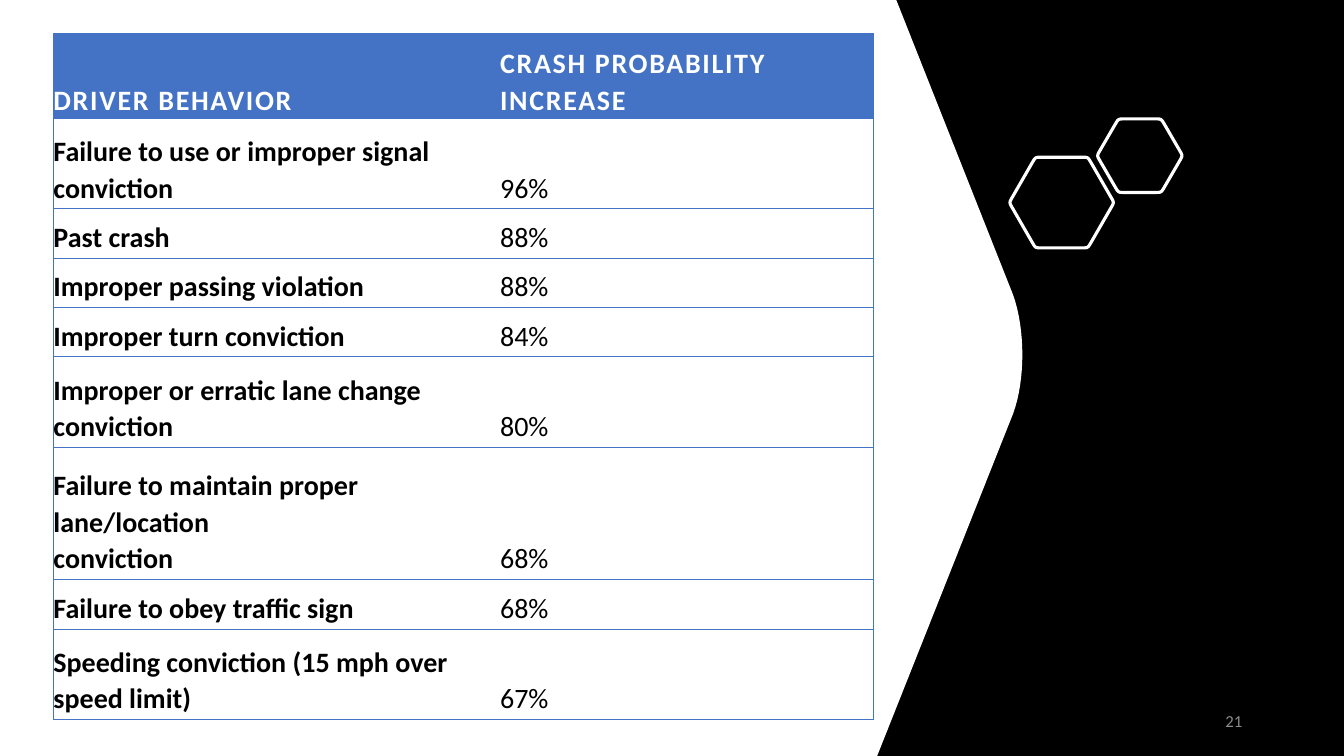
from dataclasses import dataclass
from math import hypot

from lxml.etree import SubElement
from pptx import Presentation
from pptx.dml.color import RGBColor
from pptx.enum.shapes import MSO_SHAPE
from pptx.enum.text import MSO_ANCHOR, PP_ALIGN
from pptx.oxml.ns import qn
from pptx.util import Pt

PX = 9144  # 100 px to the inch
SLIDE = (1333, 750)

HEADER = ("DRIVER BEHAVIOR", "CRASH PROBABILITY INCREASE")
BEHAVIORS = [
    ("Failure to use or improper signal conviction", "96%"),
    ("Past crash", "88%"),
    ("Improper passing violation", "88%"),
    ("Improper turn conviction", "84%"),
    ("Improper or erratic lane change conviction", "80%"),
    ("Failure to maintain proper lane/location\nconviction", "68%"),
    ("Failure to obey traffic sign", "68%"),
    ("Speeding conviction (15 mph over speed limit)", "67%"),
]
TABLE_AT = (53, 33)
COLUMNS = (443, 370)
ROWS = (84, 90, 49, 49, 49, 90, 131, 49, 90)

PANEL_BULGE = ((1005, 293), (1017, 327), (1017, 377), (1005, 410))
HEXAGONS = [(1001, 156, 104, 90), (1088, 118, 85, 73)]
CORNER = 6
SLIDE_NUMBER = ("21", (942, 695, 300, 40))


@dataclass(frozen=True)
class Theme:
    font: str = "Calibri"
    black: str = "000000"
    white: str = "FFFFFF"
    blue: str = "4472C4"
    gray: str = "8C8C8C"
    table_size: int = 20
    number_size: int = 12
    border: float = 0.5
    outline: float = 2.25


THEME = Theme()


def emu(*lengths):
    return [round(n * PX) for n in lengths]


def rgb(color):
    return RGBColor.from_string(color)


def write(tf, text, size, color, bold=False, align=None, spacing=0,
          line=None, after=None):
    p = tf.paragraphs[0]
    p.text = text
    p.alignment, p.line_spacing = align, line
    if after is not None:
        p.space_after = Pt(after)
    for r in p.runs:
        r.font.name, r.font.size, r.font.bold = THEME.font, Pt(size), bold
        r.font.color.rgb = rgb(color)
        if spacing:
            r.font._element.set("spc", str(round(spacing * 100)))


def curve(a, b, c, d, steps=16):
    """Points along a cubic Bezier curve from a to d."""
    weights = [((1 - t) ** 3, 3 * t * (1 - t) ** 2, 3 * t * t * (1 - t), t ** 3)
               for t in (i / steps for i in range(steps + 1))]
    return [tuple(sum(w * p[axis] for w, p in zip(ws, (a, b, c, d)))
                  for axis in (0, 1)) for ws in weights]


def toward(start, end, distance):
    dx, dy = end[0] - start[0], end[1] - start[1]
    part = distance / hypot(dx, dy)
    return start[0] + dx * part, start[1] + dy * part


def rounded_hexagon(x, y, w, h):
    corners = [(x, y + h / 2), (x + w / 4, y), (x + w * 3 / 4, y),
               (x + w, y + h / 2), (x + w * 3 / 4, y + h), (x + w / 4, y + h)]
    points = []
    for i, corner in enumerate(corners):
        before, after = corners[i - 1], corners[(i + 1) % 6]
        points += curve(toward(corner, before, CORNER), corner, corner,
                        toward(corner, after, CORNER), 8)
    return points


def add_outline(shapes, points, fill=None, line=None):
    start, *rest = [emu(*p) for p in points]
    builder = shapes.build_freeform(*start)
    builder.add_line_segments(rest, close=True)
    paint(builder.convert_to_shape(), fill, line)


def paint(sp, fill=None, line=None):
    sp.shadow.inherit = False
    if fill:
        sp.fill.solid()
        sp.fill.fore_color.rgb = rgb(fill)
    else:
        sp.fill.background()
    if line:
        sp.line.color.rgb = rgb(line)
        sp.line.width = Pt(THEME.outline)
    else:
        sp.line.fill.background()


def set_borders(cell, sides):
    """Draw the named sides (L, R, T, B) and clear the others."""
    tc_pr = cell._tc.get_or_add_tcPr()
    for side in "LRTB":
        ln = SubElement(tc_pr, qn(f"a:ln{side}"), w=str(Pt(THEME.border)))
        if side in sides:
            fill = SubElement(ln, qn("a:solidFill"))
            SubElement(fill, qn("a:srgbClr"), val=THEME.blue)
        else:
            SubElement(ln, qn("a:noFill"))


def add_behavior_table(slide):
    size = (sum(COLUMNS), sum(ROWS))
    table = slide.shapes.add_table(len(ROWS), len(COLUMNS),
                                   *emu(*TABLE_AT, *size)).table
    table.first_row = table.horz_banding = False
    for column, width in zip(table.columns, emu(*COLUMNS)):
        column.width = width
    for row, height in zip(table.rows, emu(*ROWS)):
        row.height = height
    for i, texts in enumerate([HEADER, *BEHAVIORS]):
        header = i == 0
        for j, text in enumerate(texts):
            cell = table.cell(i, j)
            set_borders(cell, "LTB" if j == 0 else "RTB")
            if header:
                cell.fill.solid()
                cell.fill.fore_color.rgb = rgb(THEME.blue)
            else:
                cell.fill.background()
            cell.vertical_anchor = MSO_ANCHOR.BOTTOM
            (cell.margin_left, cell.margin_top, cell.margin_right,
             cell.margin_bottom) = emu(*((0, 0, 0, 0) if header else (0, 3, 5, 3)))
            write(cell.text_frame, text, THEME.table_size,
                  THEME.white if header else THEME.black,
                  bold=header or j == 0, spacing=1.2 if header else 0,
                  line=1.07, after=8)


def main():
    prs = Presentation()
    prs.slide_width, prs.slide_height = emu(*SLIDE)
    slide = prs.slides.add_slide(prs.slide_layouts[6])
    shapes = slide.shapes

    backdrop = shapes.add_shape(MSO_SHAPE.RECTANGLE, *emu(0, 0, *SLIDE))
    paint(backdrop, THEME.black)
    panel = [(0, 0), (889, 0), *curve(*PANEL_BULGE), (870, 750), (0, 750)]
    add_outline(shapes, panel, fill=THEME.white)

    group = shapes.add_group_shape()
    for box in HEXAGONS:
        add_outline(group.shapes, rounded_hexagon(*box), line=THEME.white)

    add_behavior_table(slide)

    number, box = SLIDE_NUMBER
    tf = shapes.add_textbox(*emu(*box)).text_frame
    tf.word_wrap = True
    tf.vertical_anchor = MSO_ANCHOR.MIDDLE
    write(tf, number, THEME.number_size, THEME.gray, align=PP_ALIGN.RIGHT)

    prs.save("out.pptx")


if __name__ == "__main__":
    main()
